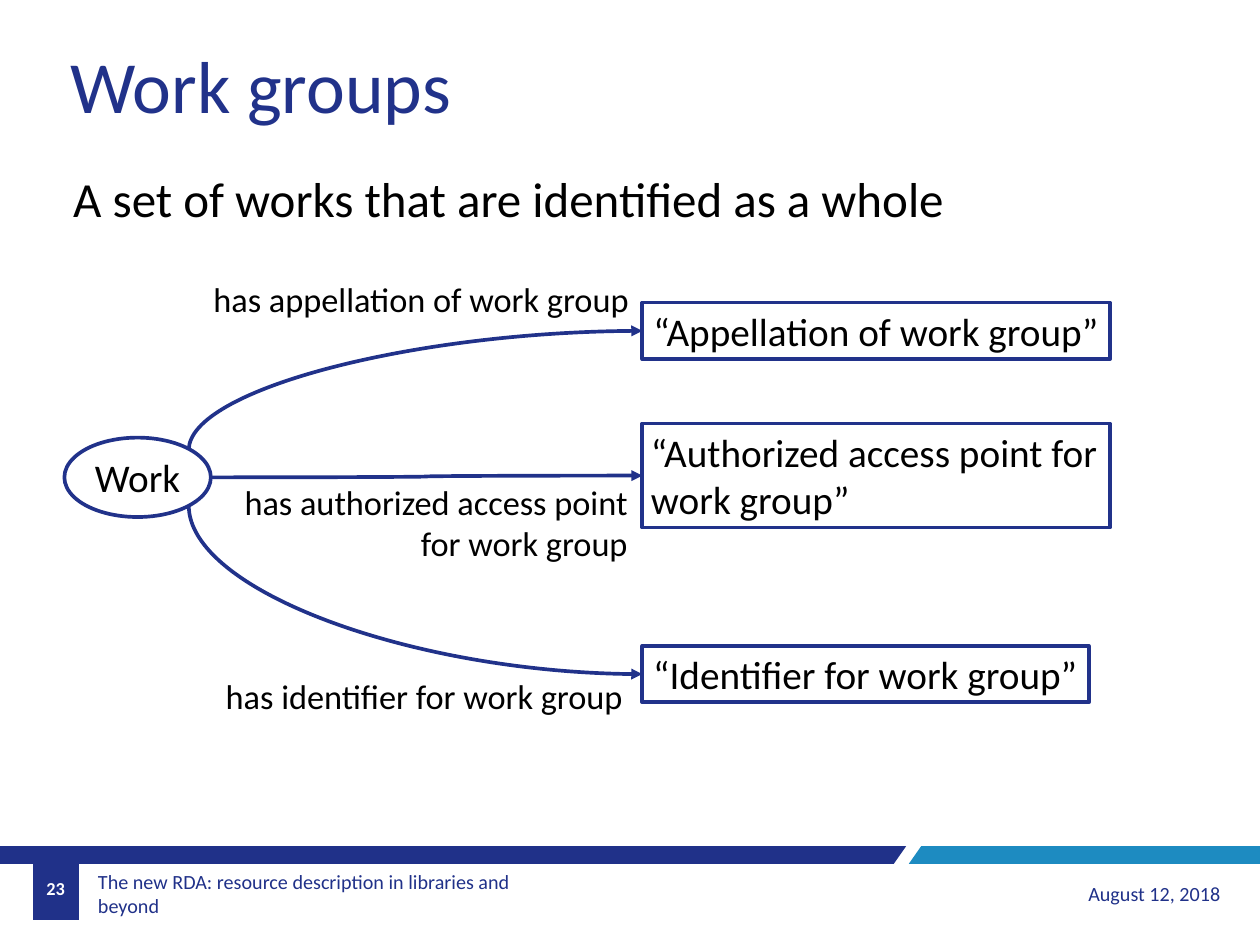
from dataclasses import dataclass

from lxml.etree import SubElement
from pptx import Presentation
from pptx.dml.color import RGBColor
from pptx.enum.shapes import MSO_CONNECTOR, MSO_SHAPE
from pptx.enum.text import MSO_ANCHOR, MSO_AUTO_SIZE, PP_ALIGN
from pptx.oxml.ns import qn
from pptx.util import Pt

PX = 9144
WIDTH, HEIGHT = 1428, 1071


@dataclass(frozen=True)
class Theme:
    font: str = "Calibri"
    navy: RGBColor = RGBColor(0x21, 0x32, 0x8A)
    band: RGBColor = RGBColor(0x20, 0x31, 0x89)
    accent: RGBColor = RGBColor(0x1D, 0x8B, 0xC1)
    white: RGBColor = RGBColor(0xFF, 0xFF, 0xFF)
    black: RGBColor = RGBColor(0, 0, 0)
    title: float = 60
    lead: float = 40
    node: float = 32
    label: float = 28
    footer: float = 16.4
    number: float = 14.9
    line: float = 3


THEME = Theme()


def emu(*lengths):
    return [round(length * PX) for length in lengths]


def write(frame, text, size, color, align=PP_ALIGN.LEFT, anchor=MSO_ANCHOR.TOP, wrap=False, bold=False):
    frame.text = text
    frame.word_wrap = wrap
    frame.auto_size = MSO_AUTO_SIZE.NONE
    frame.vertical_anchor = anchor
    for paragraph in frame.paragraphs:
        paragraph.alignment = align
        paragraph.space_before = Pt(0)
        paragraph.font.name = THEME.font
        paragraph.font.size = Pt(size)
        paragraph.font.bold = bold
        paragraph.font.color.rgb = color


def add_text(slide, box, text, size, color, **options):
    caption = slide.shapes.add_textbox(*emu(*box))
    write(caption.text_frame, text, size, color, **options)
    return caption.text_frame


def fill_placeholder(holder, box, text, size, color):
    holder.left, holder.top, holder.width, holder.height = emu(*box)
    write(holder.text_frame, text, size, color)


def add_band(slide, points, color):
    builder = slide.shapes.build_freeform(*points[0], scale=PX)
    builder.add_line_segments(points[1:], close=True)
    band = builder.convert_to_shape()
    band.shadow.inherit = False
    band.fill.solid()
    band.fill.fore_color.rgb = color
    band.line.fill.background()


def add_node(slide, kind, box, text, align=PP_ALIGN.CENTER, wrap=False):
    node = slide.shapes.add_shape(kind, *emu(*box))
    node.shadow.inherit = False
    node.fill.solid()
    node.fill.fore_color.rgb = THEME.white
    node.line.color.rgb = THEME.navy
    node.line.width = Pt(THEME.line)
    write(node.text_frame, text, THEME.node, THEME.black, align, MSO_ANCHOR.MIDDLE, wrap)


def add_arrow(slide, start, end):
    arrow = slide.shapes.add_connector(MSO_CONNECTOR.CURVE, *emu(*start, *end))
    arrow.line.color.rgb = THEME.navy
    arrow.line.width = Pt(THEME.line)
    SubElement(arrow.line._get_or_add_ln(), qn("a:tailEnd"), type="triangle")
    properties = arrow._element.spPr
    SubElement(properties, qn("a:effectLst"))
    return properties


def add_bend(slide, start, end):
    (x1, y1), (x2, y2) = start, end
    middle_x, middle_y = (x1 + x2) / 2, (y1 + y2) / 2
    across, along = abs(y2 - y1) / 2, (x2 - x1) / 2
    turn, along = (90, along) if y2 < y1 else (270, -along)
    properties = add_arrow(slide, (middle_x + across, middle_y + along),
                           (middle_x - across, middle_y - along))
    properties.find(qn("a:xfrm")).set("rot", str(turn * 60000))
    properties.find(qn("a:prstGeom")).set("prst", "curvedConnector2")


def heading(slide, box):
    x, y, width, height = box
    title, lead = slide.placeholders
    fill_placeholder(title, (x, y, width, 111), "Work groups", THEME.title, THEME.navy)
    fill_placeholder(lead, (x + 3, y + 146, width, height - 146),
                     "A set of works that are identified as a whole", THEME.lead, THEME.black)
    layout = lead.text_frame.paragraphs[0]._p.get_or_add_pPr()
    layout.set("marL", "0")
    layout.set("indent", "0")
    SubElement(layout, qn("a:buNone"))


def work_diagram(slide, box):
    x, y, width, height = box
    work_x, work_y, work_w, work_h = x, y + 186, 166, 90
    target_x, target_w = x + 655, width - 655
    bend_x, center_y = x + 141, work_y + work_h / 2

    add_node(slide, MSO_SHAPE.OVAL, (work_x, work_y, work_w, work_h), "Work")
    add_bend(slide, (bend_x, work_y + 14), (target_x, y + 65))
    add_arrow(slide, (work_x + work_w, center_y), (target_x, center_y - 2))
    add_bend(slide, (bend_x, work_y + work_h - 13), (target_x, y + 454))

    add_node(slide, MSO_SHAPE.RECTANGLE, (target_x, y + 33, target_w, 64), "“Appellation of work group”")
    add_node(slide, MSO_SHAPE.RECTANGLE, (target_x, y + 170, target_w, 118),
             "“Authorized access point for work group”", PP_ALIGN.LEFT, True)
    add_node(slide, MSO_SHAPE.RECTANGLE, (target_x, y + 422, target_w - 24, 64),
             "“Identifier for work group”")

    for left, top, label_w, label_h, text, align in (
        (159, 0, 496, 57, "has appellation of work group", PP_ALIGN.LEFT),
        (189, 230, 459, 104, "has authorized access point\nfor work group", PP_ALIGN.RIGHT),
        (173, 450, 475, 57, "has identifier for work group", PP_ALIGN.LEFT),
    ):
        add_text(slide, (x + left, y + top, label_w, label_h), text, THEME.label, THEME.black, align=align)


def footer(slide, box):
    x, y, width, height = box
    right, base = x + width, y + 20
    add_band(slide, [(x + 1027, y), (x, y), (x, base), (x + 1013, base)], THEME.band)
    add_band(slide, [(right, y), (x + 1044, y), (x + 1030, base), (right, base)], THEME.accent)
    add_band(slide, [(x + 37, y), (x + 89, y), (x + 89, y + height), (x + 37, y + height)], THEME.band)
    talk = add_text(slide, (x + 104, y + 26, 552, 55),
                    "The new RDA: resource description in libraries and beyond",
                    THEME.footer, THEME.band, anchor=MSO_ANCHOR.MIDDLE, wrap=True)
    talk.margin_left, talk.margin_right, talk.margin_top, talk.margin_bottom = emu(7, 7, 4, 4)
    add_text(slide, (x + 1027, y + 26, 366, 55), "August 12, 2018", THEME.footer, THEME.band,
             align=PP_ALIGN.RIGHT, anchor=MSO_ANCHOR.MIDDLE, wrap=True)
    add_text(slide, (x + 37, y + 20, 52, 55), "23", THEME.number, THEME.white,
             align=PP_ALIGN.CENTER, anchor=MSO_ANCHOR.MIDDLE, wrap=True, bold=True)


def main():
    deck = Presentation()
    deck.slide_width, deck.slide_height = emu(WIDTH, HEIGHT)
    slide = deck.slides.add_slide(deck.slide_layouts[1])
    footer(slide, (0, 959, WIDTH, 84))
    heading(slide, (70, 40, 1017, 223))
    work_diagram(slide, (73, 310, 1185, 507))
    deck.save("out.pptx")


if __name__ == "__main__":
    main()
